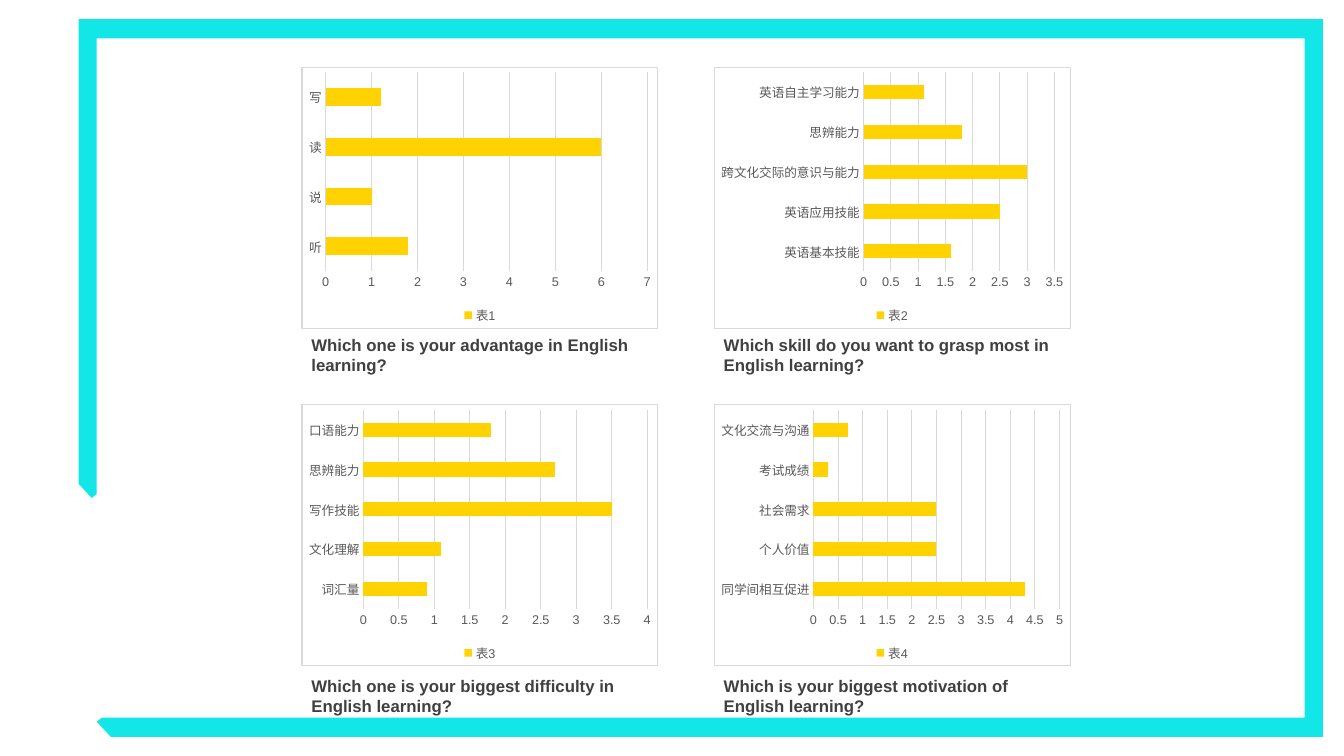
from pptx import Presentation
from pptx.chart.data import CategoryChartData
from pptx.dml.color import RGBColor
from pptx.enum.chart import XL_CHART_TYPE as ChartType
from pptx.enum.chart import XL_LEGEND_POSITION as LegendPosition
from pptx.enum.chart import XL_TICK_MARK as TickMark
from pptx.enum.text import MSO_AUTO_SIZE as AutoSize
from pptx.oxml import parse_xml
from pptx.oxml.ns import nsdecls
from pptx.util import Inches, Pt

FONT = "Arial"
CYAN, YELLOW, WHITE = "12E6E6", "FFD302", "FFFFFF"
PALE_GREY, LABEL_GREY, CAPTION_GREY = "D9D9D9", "595959", "404040"

FRAME_OUTLINE = [
    (0.78, 0.19), (13.12, 0.19), (13.12, 7.31), (1.1, 7.31), (0.96, 7.16),
    (1.01, 7.12), (12.94, 7.12), (12.94, 0.38), (0.96, 0.38), (0.96, 4.9),
    (0.91, 4.94), (0.78, 4.8),
]

PANEL_WIDTH, CHART_HEIGHT, CAPTION_HEIGHT = 3.54, 2.6, 0.5
COLUMN_LEFTS = [2.99, 7.08]
ROW_TOPS = [(0.66, 3.27), (4.01, 6.65)]  # chart top, caption top

# Series name, question, axis maximum, axis step, answers from bottom to top
SURVEY = [
    ("表1", "Which one is your advantage in English learning?", 7, 1,
     {"听": 1.8, "说": 1, "读": 6, "写": 1.2}),
    ("表2", "Which skill do you want to grasp most in English learning?", 3.5, 0.5,
     {"英语基本技能": 1.6, "英语应用技能": 2.5, "跨文化交际的意识与能力": 3,
      "思辨能力": 1.8, "英语自主学习能力": 1.1}),
    ("表3", "Which one is your biggest difficulty in English learning?", 4, 0.5,
     {"词汇量": 0.9, "文化理解": 1.1, "写作技能": 3.5, "思辨能力": 2.7, "口语能力": 1.8}),
    ("表4", "Which is your biggest motivation of English learning?", 5, 0.5,
     {"同学间相互促进": 4.3, "个人价值": 2.5, "社会需求": 2.5, "考试成绩": 0.3,
      "文化交流与沟通": 0.7}),
]


def paint(color_format, color):
    color_format.rgb = RGBColor.from_string(color)


def style_font(font, size, color, bold=False):
    font.name, font.size, font.bold = FONT, Pt(size), bold
    paint(font.color, color)


def style_line(line, color):
    line.width = Pt(0.75)
    line.fill.solid()
    paint(line.color, color)


def add_frame(slide):
    start, *corners = [(Inches(x), Inches(y)) for x, y in FRAME_OUTLINE]
    builder = slide.shapes.build_freeform(*start)
    builder.add_line_segments(corners, close=True)
    frame = builder.convert_to_shape()
    frame.shadow.inherit = False
    frame.fill.solid()
    paint(frame.fill.fore_color, CYAN)
    frame.line.fill.background()


def add_chart_border(chart):
    """Give the chart area a white fill and a thin grey outline."""
    area = parse_xml(
        f'<c:spPr {nsdecls("c", "a")}>'
        f'<a:solidFill><a:srgbClr val="{WHITE}"/></a:solidFill>'
        f'<a:ln w="{Pt(0.75)}"><a:solidFill><a:srgbClr val="{PALE_GREY}"/></a:solidFill></a:ln>'
        '</c:spPr>')
    chart.element.chart.addnext(area)


def add_survey_chart(slide, left, top, name, maximum, step, answers):
    data = CategoryChartData()
    data.categories = list(answers)
    data.add_series(name, list(answers.values()))
    chart = slide.shapes.add_chart(
        ChartType.BAR_CLUSTERED, Inches(left), Inches(top),
        Inches(PANEL_WIDTH), Inches(CHART_HEIGHT), data).chart
    style_font(chart.font, 10, "000000")
    add_chart_border(chart)
    chart.has_title = False
    chart.has_legend = True
    chart.legend.position = LegendPosition.BOTTOM
    chart.legend.include_in_layout = False
    style_font(chart.legend.font, 9, LABEL_GREY)

    plot = chart.plots[0]
    plot.gap_width = 182
    plot.vary_by_categories = False
    bars = plot.series[0].format.fill
    bars.solid()
    paint(bars.fore_color, YELLOW)

    answer_axis, score_axis = chart.category_axis, chart.value_axis
    for axis in (answer_axis, score_axis):
        axis.major_tick_mark = axis.minor_tick_mark = TickMark.NONE
        style_font(axis.tick_labels.font, 9, LABEL_GREY)
    style_line(answer_axis.format.line, PALE_GREY)
    score_axis.format.line.fill.background()
    score_axis.has_major_gridlines = True
    style_line(score_axis.major_gridlines.format.line, PALE_GREY)
    score_axis.minimum_scale, score_axis.maximum_scale = 0, maximum
    score_axis.major_unit = step


def add_caption(slide, left, top, question):
    caption = slide.shapes.add_textbox(
        Inches(left), Inches(top), Inches(PANEL_WIDTH), Inches(CAPTION_HEIGHT)).text_frame
    caption.word_wrap = True
    caption.auto_size = AutoSize.SHAPE_TO_FIT_TEXT
    caption.margin_left, caption.margin_right = Inches(0.1), Inches(0.12)
    caption.margin_top = caption.margin_bottom = Inches(0.05)
    caption.text = question
    style_font(caption.paragraphs[0].font, 12, CAPTION_GREY, bold=True)


def main():
    prs = Presentation()
    prs.slide_width, prs.slide_height = Inches(13.33), Inches(7.5)
    slide = prs.slides.add_slide(prs.slide_layouts[6])
    add_frame(slide)
    for index, (name, question, maximum, step, answers) in enumerate(SURVEY):
        row, column = divmod(index, len(COLUMN_LEFTS))
        left = COLUMN_LEFTS[column]
        chart_top, caption_top = ROW_TOPS[row]
        add_survey_chart(slide, left, chart_top, name, maximum, step, answers)
        add_caption(slide, left, caption_top, question)
    prs.save("out.pptx")


if __name__ == "__main__":
    main()
